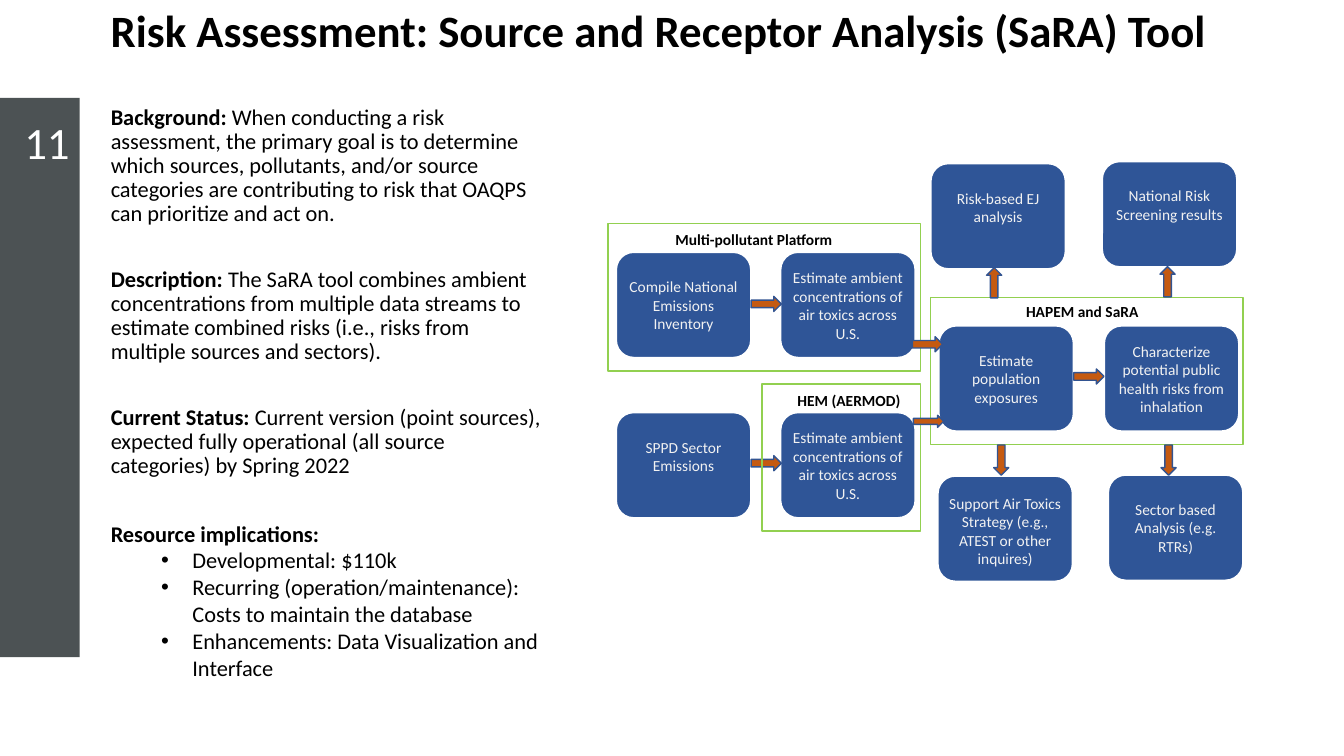
"""Build the slide on the SaRA risk assessment tool."""
from lxml import etree
from pptx import Presentation
from pptx.dml.color import RGBColor
from pptx.enum.shapes import MSO_SHAPE
from pptx.enum.text import MSO_ANCHOR, PP_ALIGN
from pptx.oxml.ns import qn
from pptx.util import Inches, Pt

RECT, ROUNDED = MSO_SHAPE.RECTANGLE, MSO_SHAPE.ROUNDED_RECTANGLE
ARROW = MSO_SHAPE.RIGHT_ARROW
LEFT, CENTER, RIGHT = PP_ALIGN.LEFT, PP_ALIGN.CENTER, PP_ALIGN.RIGHT
TOP, MIDDLE = MSO_ANCHOR.TOP, MSO_ANCHOR.MIDDLE

FONT = "Calibri"
BLACK, WHITE, PALE = "000000", "FFFFFF", "F2F2F2"
SLATE, BLUE, GREEN = "4C5254", "2F5597", "92D050"
ORANGE, ARROW_EDGE = "C55A11", "325491"

TITLE = "Risk Assessment: Source and Receptor Analysis (SaRA) Tool"
NUMBER = "11"
SECTIONS = [
    ("Background: ", "When conducting a risk assessment, the primary goal is to determine "
     "which sources, pollutants, and/or source categories are contributing to risk that "
     "OAQPS can prioritize and act on."),
    ("Description: ", "The SaRA tool combines ambient concentrations from multiple data "
     "streams to estimate combined risks (i.e., risks from multiple sources and sectors)."),
    ("Current Status: ", "Current version (point sources), expected fully operational "
     "(all source categories) by Spring 2022"),
]
RESOURCES = "Resource implications:"
COSTS = [
    "Developmental: $110k",
    "Recurring (operation/maintenance): Costs to maintain the database",
    "Enhancements: Data Visualization and Interface",
]

AMBIENT = "Estimate ambient concentrations of air toxics across U.S."
STEP_SIZE = (1.34, 1.05)
STEPS = [  # left, top, space above the words, words
    (6.11, 2.5, 0.2, "Compile National Emissions Inventory"),
    (7.74, 2.5, 0.11, AMBIENT),
    (6.11, 4.09, 0.2, "SPPD Sector Emissions"),
    (7.74, 4.09, 0.11, AMBIENT),
    (9.31, 3.23, 0.2, "Estimate population exposures"),
    (10.95, 3.23, 0.11, "Characterize potential public health risks from inhalation"),
    (9.3, 4.72, 0.13, "Support Air Toxics Strategy (e.g., ATEST or other inquires)"),
    (10.99, 4.71, 0.2, "Sector based Analysis (e.g. RTRs)"),
    (9.23, 1.62, 0.2, "Risk-based EJ analysis"),
    (10.93, 1.6, 0.2, "National Risk Screening results"),
]
FRAMES = [
    ((6.03, 2.22, 3.1, 1.46), (6.6, 2.23, 1.85, 0.29), LEFT, "Multi-pollutant Platform"),
    ((7.56, 3.81, 1.57, 1.46), (7.81, 3.83, 1.25, 0.29), LEFT, "HEM (AERMOD)"),
    ((9.23, 2.95, 3.1, 1.46), (9.81, 2.95, 1.85, 0.29), CENTER, "HAPEM and SaRA"),
]
ARROW_LENGTH = 0.3
INNER_ARROWS = [(7.45, 2.94, 0.15, 0), (7.45, 4.52, 0.15, 0), (10.65, 3.66, 0.15, 0)]
CROSSING_ARROWS = [
    (9.05, 3.34, 0.15, 0), (9.06, 4.12, 0.12, 0),
    (9.71, 2.73, 0.15, 270), (11.43, 2.72, 0.15, 270),
    (9.78, 4.49, 0.15, 90), (11.44, 4.49, 0.15, 90),
]


def color(code):
    return RGBColor.from_string(code)


def style(paragraph, size, code=BLACK, bold=False, align=LEFT):
    paragraph.alignment = align
    font = paragraph.font
    font.name, font.size, font.bold = FONT, Pt(size), bold
    font.color.rgb = color(code)


def add_box(page, place, anchor=TOP):
    box = page.shapes.add_textbox(*map(Inches, place))
    box.text_frame.word_wrap = True
    box.text_frame.vertical_anchor = anchor
    return box.text_frame


def add_label(page, place, text, size, anchor=TOP, **look):
    para = add_box(page, place, anchor).paragraphs[0]
    para.text = text
    style(para, size, **look)
    return para


def add_figure(page, kind, place, fill=None, edge=None, weight=1):
    figure = page.shapes.add_shape(kind, *map(Inches, place))
    figure.shadow.inherit = False
    if fill:
        figure.fill.solid()
        figure.fill.fore_color.rgb = color(fill)
    else:
        figure.fill.background()
    if edge:
        figure.line.color.rgb = color(edge)
        figure.line.width = Pt(weight)
    else:
        figure.line.fill.background()
    return figure


def add_bullet(paragraph):
    props = paragraph._p.get_or_add_pPr()
    props.set("marL", str(Inches(0.81)))
    props.set("indent", str(Inches(-0.31)))
    etree.SubElement(props, qn("a:buFont")).set("typeface", "Arial")
    etree.SubElement(props, qn("a:buChar")).set("char", "•")
    defaults = props.find(qn("a:defRPr"))
    if defaults is not None:
        props.append(defaults)


def add_summary(page):
    frame = add_box(page, (1, 1, 4.49, 5.91))
    para = frame.paragraphs[0]
    for heading, text in SECTIONS:
        span = para.add_run()
        span.text, span.font.bold = heading, True
        para.add_run().text = text
        style(para, 16)
        para.line_spacing, para.space_after = 0.9, Pt(29.5)
        para = frame.add_paragraph()
    para.text = RESOURCES
    style(para, 16, bold=True)
    for cost in COSTS:
        para = frame.add_paragraph()
        para.text = cost
        para.level = 1
        style(para, 16)
        add_bullet(para)


def add_step(page, left, top, space, text):
    step = add_figure(page, ROUNDED, (left, top, *STEP_SIZE), BLUE, WHITE, 1.5)
    frame = step.text_frame
    frame.word_wrap, frame.vertical_anchor = True, TOP
    frame.margin_left = frame.margin_right = Inches(0.04)
    frame.margin_top, frame.margin_bottom = Inches(space), 0
    frame.text = text
    style(frame.paragraphs[0], 11, PALE, align=CENTER)


def add_arrows(page, arrows):
    for left, top, height, turn in arrows:
        arrow = add_figure(page, ARROW, (left, top, ARROW_LENGTH, height), ORANGE, ARROW_EDGE)
        arrow.rotation = turn


def main():
    deck = Presentation()
    deck.slide_width, deck.slide_height = Inches(13.33), Inches(7.5)
    page = deck.slides.add_slide(deck.slide_layouts[6])
    title = add_label(page, (1, 0, 11.27, 0.66), TITLE, 32, MIDDLE, bold=True)
    title.line_spacing = 0.9
    add_figure(page, RECT, (0, 0.97, 0.79, 5.55), SLATE)
    add_label(page, (0, 1.07, 0.79, 0.66), NUMBER, 32, MIDDLE, code=WHITE, align=RIGHT)
    add_summary(page)
    for step in STEPS:
        add_step(page, *step)
    add_arrows(page, INNER_ARROWS)
    for outline, place, align, text in FRAMES:
        add_figure(page, RECT, outline, edge=GREEN)
        add_label(page, place, text, 11, bold=True, align=align)
    add_arrows(page, CROSSING_ARROWS)
    deck.save("out.pptx")


if __name__ == "__main__":
    main()
